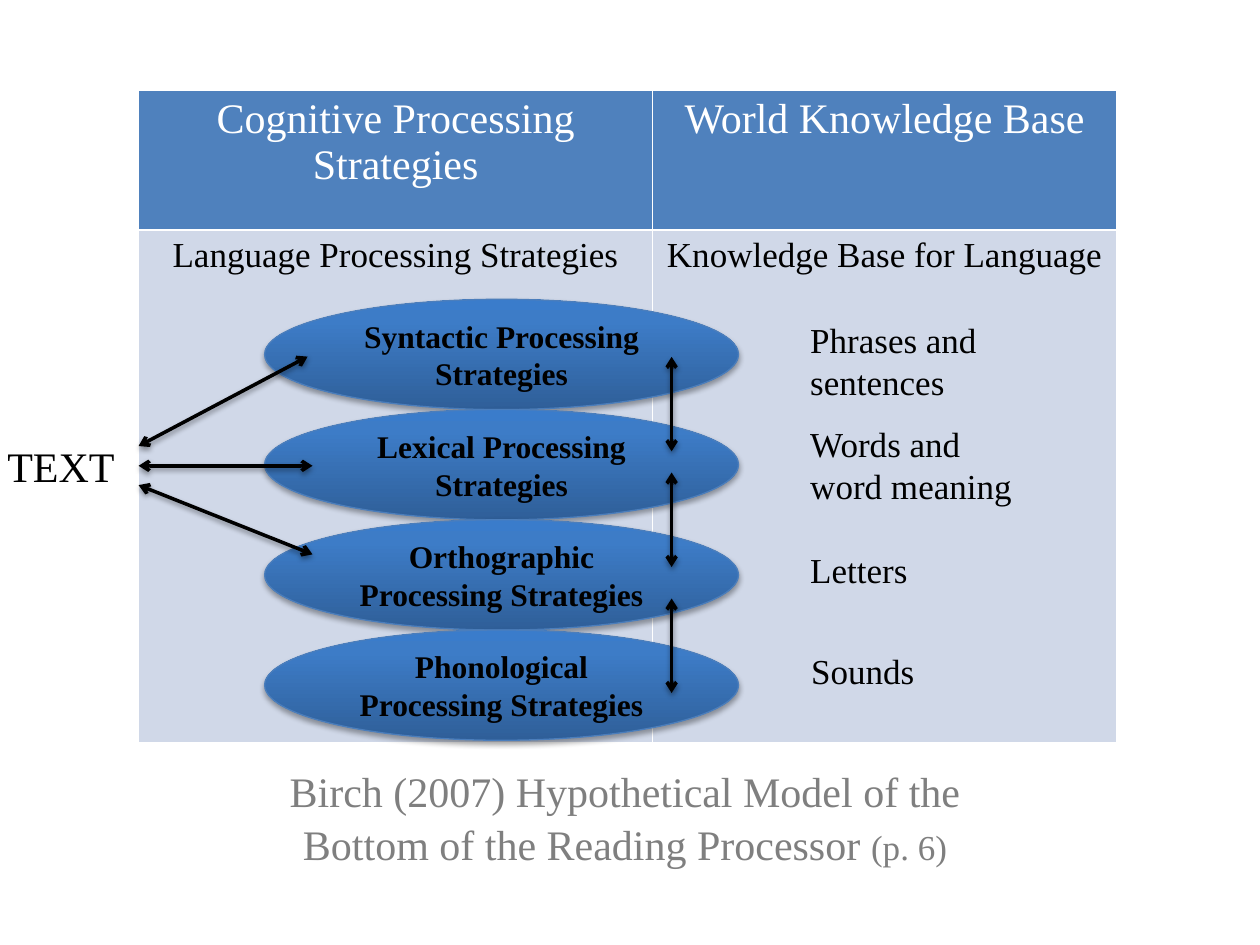
"""Builds a slide on a model of the bottom of the reading processor."""
import pptx
import pptx.util
import pptx.dml.color
import pptx.enum.shapes
import pptx.enum.text
import pptx.oxml
import pptx.oxml.ns

Pt = pptx.util.Pt
RGB = pptx.dml.color.RGBColor
ALIGN = pptx.enum.text.PP_ALIGN
ANCHOR = pptx.enum.text.MSO_ANCHOR
SHAPE = pptx.enum.shapes.MSO_SHAPE
LINK = pptx.enum.shapes.MSO_CONNECTOR

FACE = "Times New Roman"
BLACK = RGB(0, 0, 0)
WHITE = RGB(255, 255, 255)
GRAY = RGB(0x7F, 0x7F, 0x7F)
HEAD = RGB(0x4F, 0x81, 0xBD)
BODY = RGB(0xD0, 0xD8, 0xE8)
EDGE = RGB(0x4B, 0x7E, 0xBC)
STOPS = [(0, RGB(0x2F, 0x5F, 0x99)), (80, RGB(0x3D, 0x7C, 0xC7)),
         (100, RGB(0x3A, 0x7C, 0xCB))]

COLS = [293.8, 265]
ROWS = [
    (80, 24, WHITE, HEAD,
     ["Cognitive Processing Strategies", "World Knowledge Base"]),
    (293.3, 20, BLACK, BODY,
     ["Language Processing Strategies", "Knowledge Base for Language"]),
]
STEPS = ["Syntactic", "Lexical", "Orthographic", "Phonological"]
NOTES = [
    (-2.9, 248.4, 82, 24, ["TEXT"]),
    (455.9, 178.6, 112, 20, ["Phrases and", "sentences"]),
    (455.9, 237.6, 132, 20, ["Words and", "word meaning"]),
    (455.9, 309.7, 71, 20, ["Letters"]),
    (456.4, 367.7, 74, 20, ["Sounds"]),
]
TITLE = "Birch (2007) Hypothetical Model of the\vBottom of the Reading Processor "
PAGE = "(p. 6)"
LEFT, TOP = 79.2, 51.3
RAYS = [(175.8, 203.8, 254.9), (178.6, 316.8, 277.2), (178.6, 266.2, 266.2)]
SPINE, SPAN = 383.8, 54
TIERS = [203.9, 270, 342]


def style(para, size, color=BLACK, align=ALIGN.LEFT, bold=False):
    para.alignment = align
    font = para.font
    font.name, font.size, font.bold = FACE, Pt(size), bold
    font.color.rgb = color


def node(text):
    return pptx.oxml.parse_xml(
        text.replace(" ", f' {pptx.oxml.ns.nsdecls("a")} ', 1))


def shade(shape, dist, alpha):
    shape._element.spPr.append(node(
        f'<a:effectLst ><a:outerShdw blurRad="{Pt(3.1)}" dist="{Pt(dist)}" '
        f'dir="5400000" rotWithShape="0"><a:srgbClr val="000000">'
        f'<a:alpha val="{alpha * 1000}"/></a:srgbClr></a:outerShdw></a:effectLst>'))


def arrow(shapes, *ends):
    link = shapes.add_connector(LINK.STRAIGHT, *map(Pt, ends))
    link.line.color.rgb = BLACK
    link.line.width = Pt(2)
    line = link._element.spPr.find(pptx.oxml.ns.qn("a:ln"))
    for tag in ("headEnd", "tailEnd"):
        line.append(node(f'<a:{tag} type="arrow"/>'))
    shade(link, 1.6, 38)


def grid(shapes):
    high = sum(row[0] for row in ROWS)
    table = shapes.add_table(len(ROWS), len(COLS), Pt(LEFT), Pt(TOP),
                             Pt(sum(COLS)), Pt(high)).table
    for col, width in zip(table.columns, COLS):
        col.width = Pt(width)
    for r, (height, size, color, fill, texts) in enumerate(ROWS):
        table.rows[r].height = Pt(height)
        for c, text in enumerate(texts):
            cell = table.cell(r, c)
            cell.text = text
            cell.fill.solid()
            cell.fill.fore_color.rgb = fill
            style(cell.text_frame.paragraphs[0], size, color, ALIGN.CENTER)


def oval(shapes, rank, name):
    shape = shapes.add_shape(SHAPE.OVAL, Pt(151.2), Pt(171 + 63 * rank),
                             Pt(270.8), Pt(63))
    shape.line.color.rgb = EDGE
    shape.line.width = Pt(0.75)
    stops = "".join(f'<a:gs pos="{pos * 1000}"><a:srgbClr val="{color}"/></a:gs>'
                    for pos, color in STOPS)
    props = shape._element.spPr
    props.insert(2, node(f'<a:gradFill rotWithShape="1"><a:gsLst>{stops}</a:gsLst>'
                         '<a:lin ang="16200000" scaled="0"/></a:gradFill>'))
    shade(shape, 1.8, 35)
    frame = shape.text_frame
    frame.text = f"{name} Processing Strategies"
    frame.word_wrap = True
    frame.vertical_anchor = ANCHOR.MIDDLE
    style(frame.paragraphs[0], 18, align=ALIGN.CENTER, bold=True)


def note(shapes, left, top, width, size, lines):
    high = 7.2 + 1.2 * size * len(lines)
    frame = shapes.add_textbox(*map(Pt, (left, top, width, high))).text_frame
    frame.word_wrap = False
    frame.text = "\n".join(lines)
    for para in frame.paragraphs:
        style(para, size)


def title(shapes):
    frame = shapes.add_textbox(Pt(77.8), Pt(432), Pt(558.7), Pt(95)).text_frame
    frame.word_wrap = True
    para = frame.paragraphs[0]
    para.text = TITLE
    style(para, 24, GRAY, ALIGN.CENTER)
    para.line_spacing = 1.06
    run = para.add_run()
    run.text = PAGE
    run.font.size = Pt(20)


def main():
    deck = pptx.Presentation()
    deck.slide_width, deck.slide_height = Pt(720), Pt(540)
    shapes = deck.slides.add_slide(deck.slide_layouts[6]).shapes
    grid(shapes)
    for rank, name in enumerate(STEPS):
        oval(shapes, rank, name)
    title(shapes)
    for x, y, end in RAYS:
        arrow(shapes, x, y, LEFT, end)
    for item in NOTES:
        note(shapes, *item)
    for top in TIERS:
        arrow(shapes, SPINE, top, SPINE, top + SPAN)
    deck.save("out.pptx")


if __name__ == "__main__":
    main()
